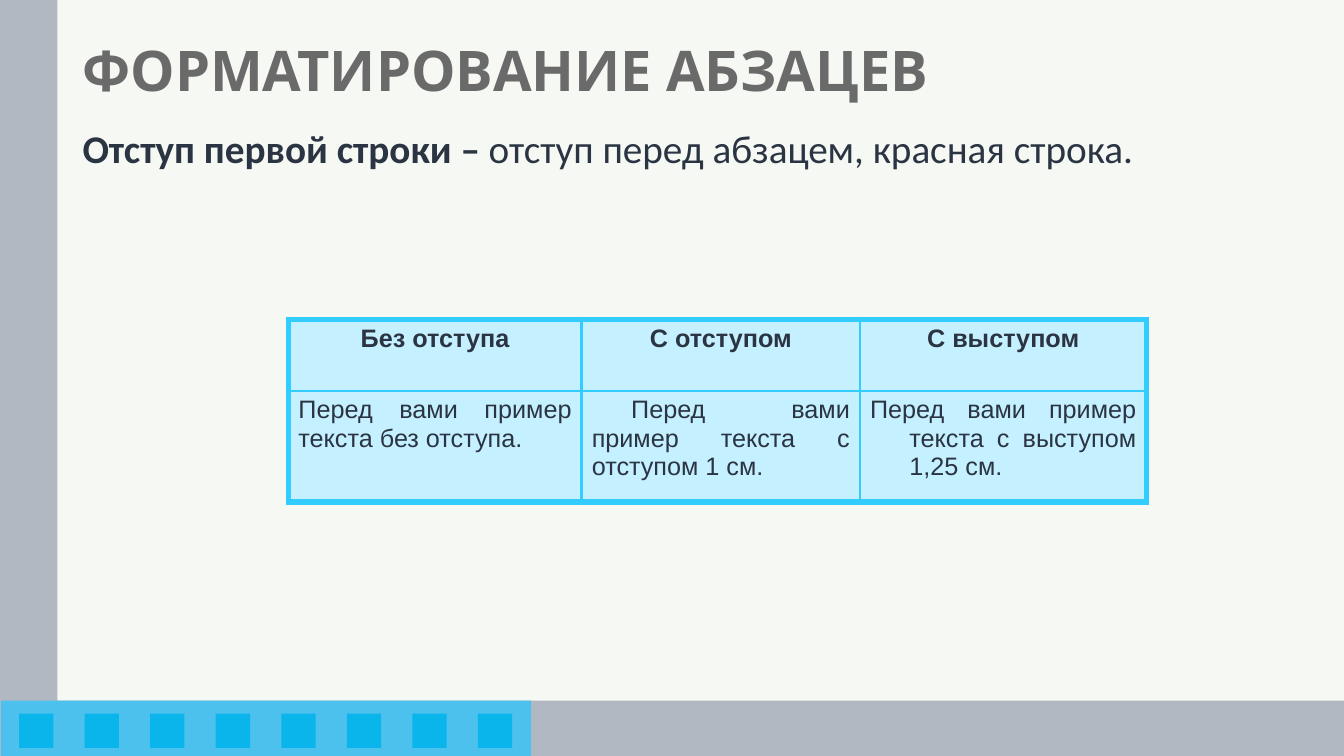
from pptx import Presentation
from pptx import util as u
from pptx.dml.color import RGBColor
from pptx.enum import shapes, text
from pptx.oxml import parse_xml
from pptx.oxml.ns import nsdecls

THEME = {
    "bg": "F6F8F3", "bar": "B2B8C2", "strip": "4DC1ED", "square": "0AB5EC",
    "title": "6A6A6A", "ink": "2A3442", "cell": "C5F0FF", "border": "33CCFF",
    "title_size": 40, "body_size": 28, "cell_size": 18,
    "thick": 4.5, "thin": 2.25,
}
ALIGN = text.PP_ALIGN

prs = Presentation()
prs.slide_width, prs.slide_height = u.Inches(13.33), u.Inches(7.5)
s = prs.slides.add_slide(prs.slide_layouts[6])
s.background.fill.solid()
s.background.fill.fore_color.rgb = RGBColor.from_string(THEME["bg"])


def add_rect(left, top, width, height, color):
    sp = s.shapes.add_shape(shapes.MSO_SHAPE.RECTANGLE, *map(u.Inches, (left, top, width, height)))
    sp.shadow.inherit = False
    sp.fill.solid()
    sp.fill.fore_color.rgb = RGBColor.from_string(THEME[color])
    sp.line.fill.background()


def add_run(p, words, color, **font):
    r = p.add_run()
    r.text = words
    r.font.color.rgb = RGBColor.from_string(THEME[color])
    for name, value in font.items():
        setattr(r.font, name, value)


# Side bar, bottom bar and the strip of squares
add_rect(0, 0, 0.57, 7.5, "bar")
add_rect(0, 6.95, 13.33, 0.55, "bar")
add_rect(0.01, 6.95, 5.26, 0.55, "strip")
for i in range(8):
    add_rect(0.19 + 0.65 * i, 7.08, 0.34, 0.34, "square")

# Title and definition
texts = [
    (0, 1.45, text.MSO_ANCHOR.MIDDLE, ALIGN.LEFT, 0, "title", "Karla", "title_size",
     [("ФОРМАТИРОВАНИЕ АБЗАЦЕВ", True)]),
    (1.24, 0.73, text.MSO_ANCHOR.TOP, ALIGN.JUSTIFY, 10, "ink", "Calibri", "body_size",
     [("Отступ первой строки – ", True), ("отступ перед абзацем, красная строка.", False)]),
]
for top, height, anchor, align, before, color, font, size, runs in texts:
    tf = s.shapes.add_textbox(u.Inches(0.72), u.Inches(top), u.Inches(11.88), u.Inches(height)).text_frame
    tf.word_wrap, tf.vertical_anchor = True, anchor
    p = tf.paragraphs[0]
    fmt = {"alignment": align, "line_spacing": 0.9, "space_before": u.Pt(before)}
    for name, value in fmt.items():
        setattr(p, name, value)
    for words, bold in runs:
        add_run(p, words, color, name=font, size=u.Pt(THEME[size]), bold=bold)

# Table of first-line indents
rows = [
    ["Без отступа", "С отступом", "С выступом"],
    ["Перед вами пример текста без отступа.",
     "Перед вами пример текста с отступом 1 см.",
     "Перед вами пример текста с выступом 1,25 см."],
]
indents = [(0, 0), (0, 0.39), (0.39, -0.39)]  # left margin, first line
col_widths, row_heights = [2.91, 2.76, 2.84], [0.71, 1.1]
table = s.shapes.add_table(2, 3, u.Inches(2.86), u.Inches(3.17), u.Inches(8.51), u.Inches(1.81)).table
for column, width in zip(table.columns, col_widths):
    column.width = u.Inches(width)
for row, height in zip(table.rows, row_heights):
    row.height = u.Inches(height)

for i, row in enumerate(rows):
    for j, words in enumerate(row):
        cell = table.cell(i, j)
        p = cell.text_frame.paragraphs[0]
        p.alignment = ALIGN.JUSTIFY if i else ALIGN.CENTER
        if i:
            margin, first = indents[j]
            pPr = p._p.get_or_add_pPr()
            pPr.set("marL", str(u.Inches(margin)))
            pPr.set("indent", str(u.Inches(first)))
        add_run(p, words, "ink", name="Arial", size=u.Pt(THEME["cell_size"]), bold=i == 0)

        # Thick outer border, thin inner lines
        outer = {"lnL": j == 0, "lnR": j == 2, "lnT": i == 0, "lnB": i == 1}
        for tag, is_outer in outer.items():
            width = u.Pt(THEME["thick" if is_outer else "thin"])
            cell._tc.get_or_add_tcPr().append(parse_xml(
                f'<a:{tag} {nsdecls("a")} w="{width}"><a:solidFill>'
                f'<a:srgbClr val="{THEME["border"]}"/></a:solidFill></a:{tag}>'))
        cell.fill.solid()
        cell.fill.fore_color.rgb = RGBColor.from_string(THEME["cell"])

prs.save("out.pptx")
